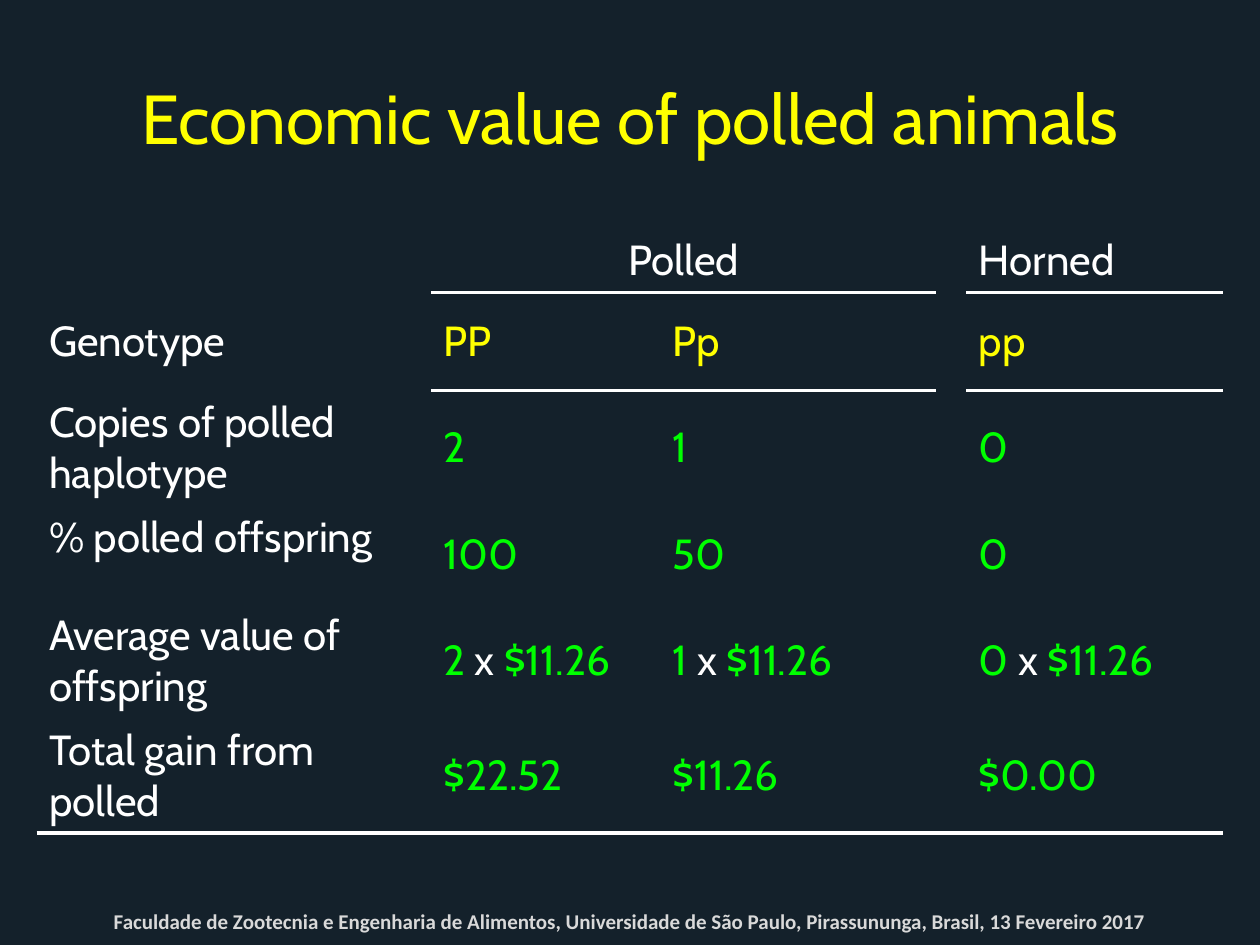
from lxml.etree import SubElement
from pptx import Presentation
from pptx.dml.color import RGBColor
from pptx.enum.text import MSO_ANCHOR as Anchor, PP_ALIGN as Align
from pptx.oxml.ns import qn
from pptx.util import Inches, Pt

NAVY = RGBColor(0x14, 0x21, 0x2B)
WHITE = RGBColor(0xFF, 0xFF, 0xFF)
YELLOW = RGBColor(0xFF, 0xFF, 0x00)
GREEN = RGBColor(0x00, 0xFF, 0x00)
GREY = RGBColor(0xD9, 0xD9, 0xD9)

NO_GRID_STYLE = "{2D5ABB26-0587-4C30-8999-92F81FD0307C}"
COLUMN_WIDTHS = [3.13, 1.82, 2.19, 0.23, 2.04]
ROW_HEIGHT = 0.78
VALUE_COLUMNS = [1, 2, 4]
VALUE = "$11.26"

# Row label, colour of its values, values for PP, Pp and pp
ROWS = [
    ("Genotype", YELLOW, ["PP", "Pp", "pp"]),
    ("Copies of polled haplotype", GREEN, ["2", "1", "0"]),
    ("% polled offspring", GREEN, ["100", "50", "0"]),
    ("Average value of offspring", GREEN,
     [[(f"{copies} ", GREEN), ("x ", WHITE), (VALUE, GREEN)] for copies in (2, 1, 0)]),
    ("Total gain from polled", GREEN, ["$22.52", VALUE, "$0.00"]),
]


class SlideBuilder:
    font = "Cabin"
    table_size = 24
    rule_width = 2.25

    def __init__(self, slide):
        self.slide = slide
        slide.background.fill.solid()
        slide.background.fill.fore_color.rgb = NAVY

    def add_text(self, text_frame, runs, size, align=Align.LEFT, font=None, bold=False):
        paragraph = text_frame.paragraphs[0]
        paragraph.alignment = align
        for text, color in runs:
            run = paragraph.add_run()
            run.text = text
            run.font.name = font or self.font
            run.font.size = Pt(size)
            run.font.bold = bold
            run.font.color.rgb = color

    def place(self, shape, left, top, width, height):
        shape.left, shape.top = Inches(left), Inches(top)
        shape.width, shape.height = Inches(width), Inches(height)

    def title(self, text, box):
        shape = self.slide.shapes.title
        self.place(shape, *box)
        shape.text_frame.vertical_anchor = Anchor.MIDDLE
        self.add_text(shape.text_frame, [(text, YELLOW)], 39.6, Align.CENTER)

    def footer(self, text, box):
        shape = self.slide.shapes.add_textbox(*map(Inches, box))
        shape.text_frame.word_wrap = True
        shape.text_frame.vertical_anchor = Anchor.BOTTOM
        self.add_text(shape.text_frame, [(text, GREY)], 12, Align.CENTER, "Calibri", True)

    def table(self, left, top, row_count):
        frame = self.slide.shapes.add_table(
            row_count, len(COLUMN_WIDTHS), Inches(left), Inches(top),
            Inches(sum(COLUMN_WIDTHS)), Inches(ROW_HEIGHT * row_count))
        table = frame.table
        table.first_row = table.horz_banding = False
        table._tbl.tblPr.find(qn("a:tableStyleId")).text = NO_GRID_STYLE
        for column, width in zip(table.columns, COLUMN_WIDTHS):
            column.width = Inches(width)
        for cell in table.iter_cells():
            cell.fill.background()
        return table

    def cell(self, cell, content, color, anchor=Anchor.MIDDLE, align=Align.LEFT):
        runs = [(content, color)] if isinstance(content, str) else content
        cell.vertical_anchor = anchor
        self.add_text(cell.text_frame, runs, self.table_size, align)

    def border(self, cell, side):
        properties = cell._tc.get_or_add_tcPr()
        line = SubElement(properties, qn(f"a:ln{side}"), w=str(Pt(self.rule_width)))
        fill = SubElement(line, qn("a:solidFill"))
        SubElement(fill, qn("a:srgbClr"), val=str(WHITE))
        properties.insert(0, line)  # borders come before the cell fill


def main():
    presentation = Presentation()
    presentation.slide_width, presentation.slide_height = Inches(10), Inches(7.5)
    builder = SlideBuilder(presentation.slides.add_slide(presentation.slide_layouts[5]))

    builder.title("Economic value of polled animals", (0.5, 0.3, 9, 1.25))

    # Column group headings
    table = builder.table(0.29, 1.54, len(ROWS) + 1)
    table.cell(0, 1).merge(table.cell(0, 2))
    builder.cell(table.cell(0, 1), "Polled", WHITE, Anchor.BOTTOM, Align.CENTER)
    builder.cell(table.cell(0, 4), "Horned", WHITE, Anchor.BOTTOM)

    # Body rows
    for row, (label, color, values) in enumerate(ROWS, start=1):
        anchor = Anchor.MIDDLE if row == 1 else Anchor.TOP
        builder.cell(table.cell(row, 0), label, WHITE, anchor)
        for column, value in zip(VALUE_COLUMNS, values):
            builder.cell(table.cell(row, column), value, color)

    # Rules under the headings and under the last row
    for column in VALUE_COLUMNS:
        builder.border(table.cell(0, column), "B")
        builder.border(table.cell(1, column), "T")
    for column in range(len(COLUMN_WIDTHS)):
        builder.border(table.cell(len(ROWS), column), "B")

    builder.footer(
        "Faculdade de Zootecnia e Engenharia de Alimentos, Universidade de São Paulo, "
        "Pirassununga, Brasil, 13 Fevereiro 2017", (0.5, 7.06, 9, 0.4))

    presentation.save("out.pptx")


if __name__ == "__main__":
    main()
